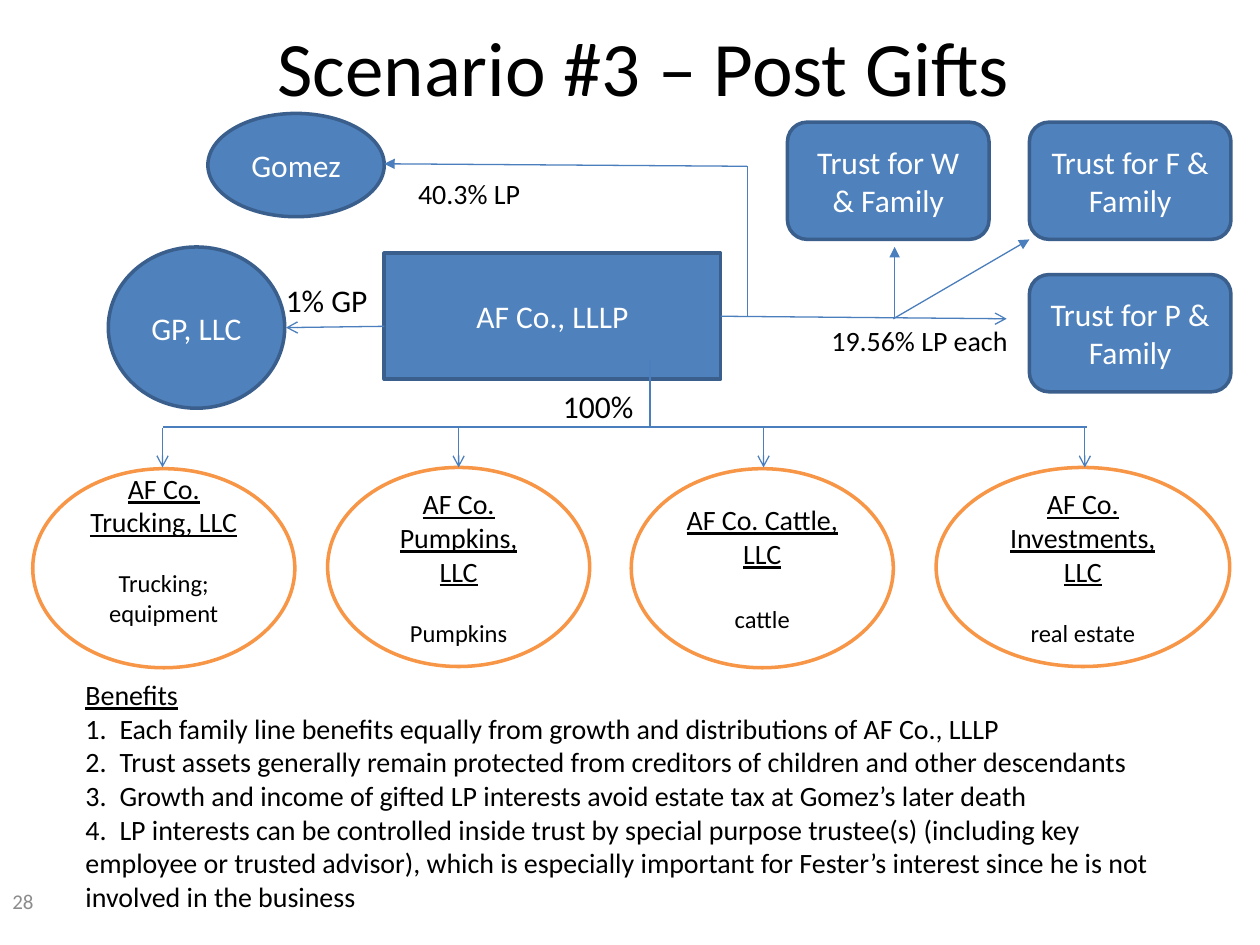
from dataclasses import dataclass

from lxml.etree import SubElement
from pptx import Presentation
from pptx.dml.color import RGBColor
from pptx.enum.shapes import MSO_CONNECTOR, MSO_SHAPE
from pptx.enum.text import MSO_ANCHOR, PP_ALIGN
from pptx.oxml.ns import qn
from pptx.util import Inches, Pt

BLUE, NAVY, ORANGE = "4F81BD", "3A5F8C", "F79646"
LINE, BLACK, WHITE, GRAY = "4B7EBC", "000000", "FFFFFF", "8C8C8C"


@dataclass
class Node:
    text: str
    kind: MSO_SHAPE
    box: tuple


@dataclass
class Firm:
    name: str
    asset: str
    box: tuple
    gap: float = 17
    lift: float = 0


@dataclass
class Link:
    start: tuple
    end: tuple
    head: str = ""


@dataclass
class Label:
    text: str
    box: tuple
    size: int
    color: str = BLACK
    align: PP_ALIGN = PP_ALIGN.LEFT
    anchor: MSO_ANCHOR = MSO_ANCHOR.TOP


RECT, OVAL, ROUND = MSO_SHAPE.RECTANGLE, MSO_SHAPE.OVAL, MSO_SHAPE.ROUNDED_RECTANGLE
NODES = [
    Node("AF Co., LLLP", RECT, (3.05, 2.01, 2.67, 1)),
    Node("GP, LLC", OVAL, (0.86, 1.96, 1.4, 1.28)),
    Node("Gomez", OVAL, (1.65, 0.9, 1.4, 0.82)),
    Node("Trust for W & Family", ROUND, (6.25, 0.97, 1.6, 0.93)),
    Node("Trust for F & Family", ROUND, (8.17, 0.97, 1.6, 0.93)),
    Node("Trust for P & Family", ROUND, (8.17, 2.18, 1.6, 0.93)),
]
FIRMS = [
    Firm("AF Co. Trucking, LLC", "Trucking; equipment", (0.26, 3.72, 2.08, 1.58), lift=0.3),
    Firm("AF Co. Pumpkins, LLC", "Pumpkins", (2.6, 3.71, 2.08, 1.58)),
    Firm("AF Co. Cattle, LLC", "cattle", (5.01, 3.72, 2.08, 1.58), gap=19.5),
    Firm("AF Co. Investments, LLC", "real estate", (7.43, 3.71, 2.33, 1.58)),
]
LINKS = [
    Link((1.29, 3.39), (8.63, 3.39)),
    Link((5.16, 2.86), (5.16, 3.39)),
    *(Link((x, 3.4), (x, 3.71), "arrow") for x in (1.29, 3.64, 6.06, 8.61)),
    Link((3.05, 2.59), (2.27, 2.6), "arrow"),
    Link((5.72, 2.51), (7.99, 2.53), "arrow"),
    Link((7.09, 2.53), (8.17, 1.9), "triangle"),
    Link((7.1, 2.53), (7.1, 1.96), "triangle"),
    Link((5.93, 1.32), (5.93, 2.51)),
    Link((5.93, 1.32), (3.05, 1.3), "triangle"),
]
LABELS = [
    Label("Scenario #3 – Post Gifts", (0.61, 0.08, 9, 0.88), 44,
          align=PP_ALIGN.CENTER, anchor=MSO_ANCHOR.MIDDLE),
    Label("100%", (4.37, 3.02, 0.96, 0.4), 18),
    Label("1% GP", (2.17, 2.18, 1, 0.4), 18),
    Label("19.56% LP each", (6.5, 2.52, 1.62, 0.37), 16),
    Label("40.3% LP", (3.22, 1.35, 1.1, 0.37), 16),
    Label("28", (0, 6.95, 2.33, 0.4), 12, GRAY, anchor=MSO_ANCHOR.MIDDLE),
]
BENEFITS = [
    "Each family line benefits equally from growth and distributions of AF Co., LLLP",
    "Trust assets generally remain protected from creditors of children and other descendants",
    "Growth and income of gifted LP interests avoid estate tax at Gomez’s later death",
    "LP interests can be controlled inside trust by special purpose trustee(s) (including key "
    "employee or trusted advisor), which is especially important for Fester’s interest since "
    "he is not involved in the business",
]


def rgb(code: str) -> RGBColor:
    return RGBColor.from_string(code)


def inches(box: tuple) -> list:
    return [Inches(n) for n in box]


def write(para, text: str, size: float, color: str = BLACK,
          align: PP_ALIGN = PP_ALIGN.LEFT, under: bool = False) -> None:
    para.text = text
    para.alignment = align
    font = para.font
    font.name, font.size, font.underline = "Calibri", Pt(size), under
    font.color.rgb = rgb(color)


def add_shape(slide, kind: MSO_SHAPE, box: tuple, fill: str, edge: str):
    shape = slide.shapes.add_shape(kind, *inches(box))
    shape.shadow.inherit = False
    shape.fill.solid()
    shape.fill.fore_color.rgb = rgb(fill)
    shape.line.color.rgb = rgb(edge)
    shape.line.width = Pt(2)
    frame = shape.text_frame
    frame.word_wrap = True
    frame.vertical_anchor = MSO_ANCHOR.MIDDLE
    return frame


def add_node(slide, node: Node) -> None:
    frame = add_shape(slide, node.kind, node.box, BLUE, NAVY)
    write(frame.paragraphs[0], node.text, 18, WHITE, PP_ALIGN.CENTER)


def add_firm(slide, firm: Firm) -> None:
    frame = add_shape(slide, OVAL, firm.box, WHITE, ORANGE)
    frame.margin_bottom = Inches(0.05 + firm.lift)
    write(frame.paragraphs[0], firm.name, 16, align=PP_ALIGN.CENTER, under=True)
    asset = frame.add_paragraph()
    write(asset, firm.asset, 14, align=PP_ALIGN.CENTER)
    asset.space_before = Pt(firm.gap)


def add_link(slide, link: Link) -> None:
    line = slide.shapes.add_connector(
        MSO_CONNECTOR.STRAIGHT, *inches(link.start + link.end))
    line.line.color.rgb = rgb(LINE)
    line.line.width = Pt(0.75)
    if link.head:
        SubElement(line.line._get_or_add_ln(), qn("a:tailEnd"), type=link.head)
    SubElement(line._element.spPr, qn("a:effectLst"))


def add_text(slide, box: tuple, anchor: MSO_ANCHOR = MSO_ANCHOR.TOP):
    frame = slide.shapes.add_textbox(*inches(box)).text_frame
    frame.word_wrap = True
    frame.vertical_anchor = anchor
    return frame


def add_label(slide, label: Label) -> None:
    frame = add_text(slide, label.box, label.anchor)
    write(frame.paragraphs[0], label.text, label.size, label.color, label.align)


def add_list(slide) -> None:
    """Number the benefits, with a tab stop after each number."""
    frame = add_text(slide, (0.58, 5.33, 9.02, 1.99))
    write(frame.paragraphs[0], "Benefits", 16, under=True)
    for num, text in enumerate(BENEFITS, 1):
        para = frame.add_paragraph()
        write(para, f"{num}.\t{text}", 16)
        props = para._p.get_or_add_pPr()
        tabs = props.makeelement(qn("a:tabLst"))
        SubElement(tabs, qn("a:tab"), pos=str(Inches(0.27)), algn="l")
        props.insert(0, tabs)


def main() -> None:
    deck = Presentation()
    deck.slide_width, deck.slide_height = Inches(10), Inches(7.5)
    slide = deck.slides.add_slide(deck.slide_layouts[6])
    for node in NODES:
        add_node(slide, node)
    for firm in FIRMS:
        add_firm(slide, firm)
    for link in LINKS:
        add_link(slide, link)
    for label in LABELS:
        add_label(slide, label)
    add_list(slide)
    deck.save("out.pptx")


if __name__ == "__main__":
    main()
